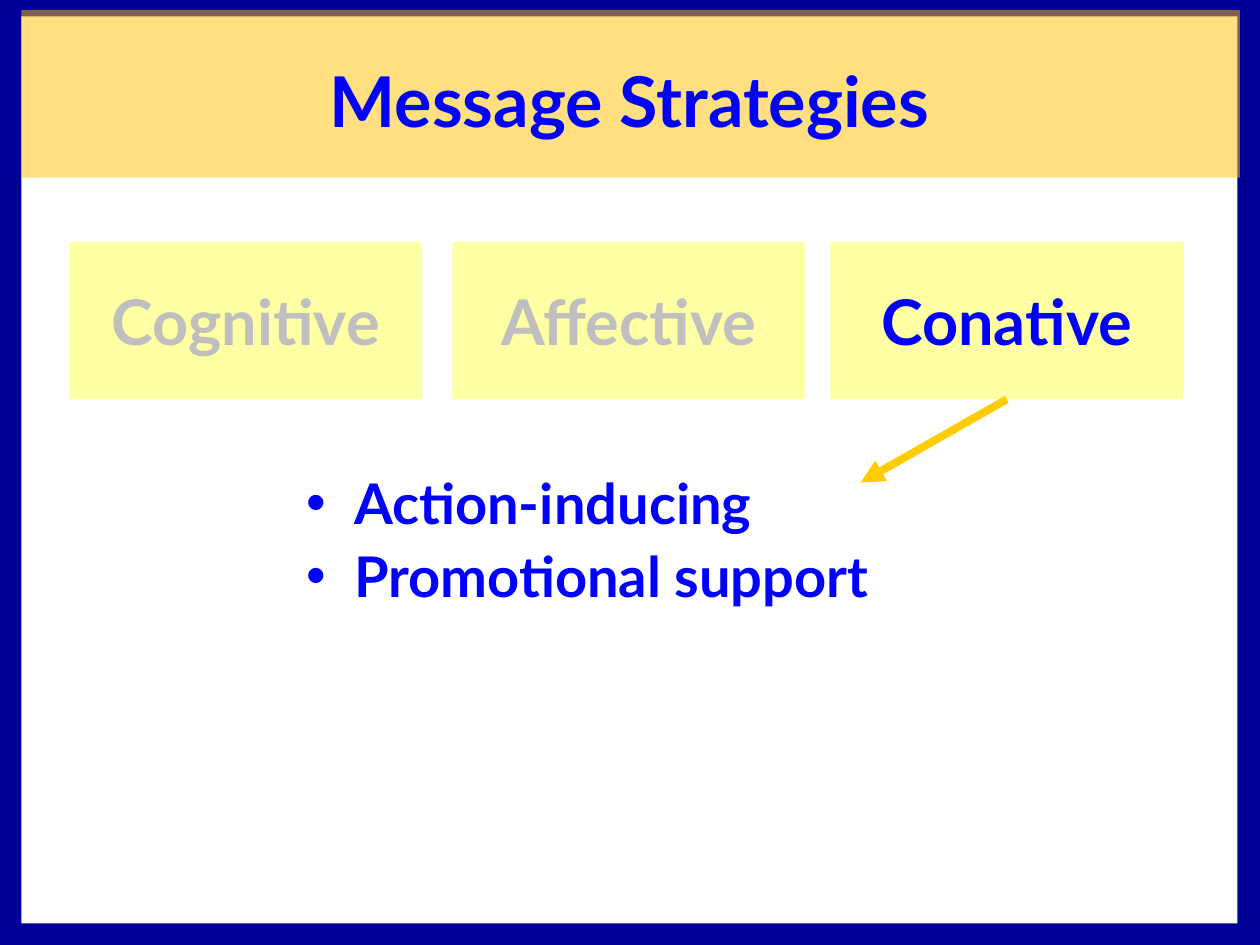
from dataclasses import dataclass

from lxml import etree
from pptx import Presentation
from pptx import util as u
from pptx.dml.color import RGBColor
from pptx.enum import shapes, text
from pptx.oxml.ns import qn


@dataclass(frozen=True)
class Theme:
    font: str = "Lato"
    navy: str = "000099"
    white: str = "FFFFFF"
    band: str = "FFC000"
    card: str = "FFFF00"
    arrow: str = "FFCC00"
    active: str = "0000FF"
    muted: str = "BFBFBF"
    title_pt: int = 40
    card_pt: int = 36
    body_pt: int = 32


@dataclass(frozen=True)
class Box:
    x: float
    y: float
    w: float
    h: float


@dataclass(frozen=True)
class Strategy:
    name: str
    left: float
    color: str


T = Theme()
FRAMES = [
    (Box(0, 0, 10, 7.5), T.navy),
    (Box(0.17, 0.13, 9.65, 7.2), T.white),
    (Box(0.33, 0.32, 9.33, 7), T.white),
]
STRATEGIES = [
    Strategy("Cognitive", 0.55, T.muted),
    Strategy("Affective", 3.59, T.muted),
    Strategy("Conative", 6.59, T.active),
]
TACTICS = ["Action-inducing", "Promotional support"]


def add_rect(s, box: Box, color: str, opacity: int = 100):
    """Draw a plain rectangle; opacity is in percent."""
    sp = s.shapes.add_shape(shapes.MSO_SHAPE.RECTANGLE, u.Inches(box.x),
                            u.Inches(box.y), u.Inches(box.w), u.Inches(box.h))
    sp.shadow.inherit = False
    sp.line.fill.background()
    sp.fill.solid()
    sp.fill.fore_color.rgb = RGBColor.from_string(color)
    if opacity < 100:
        clr = sp.element.spPr.find(qn("a:solidFill"))[0]
        etree.SubElement(clr, qn("a:alpha"), val=str(opacity * 1000))
    return sp


def write(p, content: str, *, size: int, color: str = T.active,
          align=text.PP_ALIGN.CENTER) -> None:
    """Write one formatted run into a paragraph."""
    p.alignment = align
    r = p.add_run()
    r.text = content
    r.font.name, r.font.size, r.font.bold = T.font, u.Pt(size), True
    r.font.color.rgb = RGBColor.from_string(color)


def place(sp, box: Box, anchor):
    """Move a placeholder to the front and into its box."""
    sp.left, sp.top = u.Inches(box.x), u.Inches(box.y)
    sp.width, sp.height = u.Inches(box.w), u.Inches(box.h)
    tf = sp.text_frame
    tf.word_wrap, tf.auto_size = True, text.MSO_AUTO_SIZE.NONE
    tf.vertical_anchor = anchor
    sp.element.getparent().append(sp.element)
    return tf


def add_card(s, item: Strategy):
    sp = add_rect(s, Box(item.left, 1.92, 2.8, 1.25), T.card, 36)
    tf = sp.text_frame
    tf.word_wrap = False
    tf.vertical_anchor = text.MSO_ANCHOR.MIDDLE
    write(tf.paragraphs[0], item.name, size=T.card_pt, color=item.color)
    return sp


def add_arrow(s, source, x: float, y: float) -> None:
    """Draw an arrow from the bottom middle of source to a point."""
    cx = s.shapes.add_connector(shapes.MSO_CONNECTOR.STRAIGHT,
                                source.left + source.width // 2,
                                source.top + source.height,
                                u.Inches(x), u.Inches(y))
    cx.begin_connect(source, 2)
    cx.line.color.rgb = RGBColor.from_string(T.arrow)
    cx.line.width = u.Pt(4.5)
    etree.SubElement(cx.line._get_or_add_ln(), qn("a:tailEnd"), type="triangle")
    etree.SubElement(cx.element.spPr, qn("a:effectLst"))


def add_bullet(p) -> None:
    pPr = p._p.get_or_add_pPr()
    indent = u.Inches(0.38)
    pPr.set("marL", str(indent))
    pPr.set("indent", str(-indent))
    clr = etree.SubElement(pPr, qn("a:buClr"))
    etree.SubElement(clr, qn("a:srgbClr"), val=T.active)
    etree.SubElement(pPr, qn("a:buChar"), char="•")


def main() -> None:
    prs = Presentation()
    prs.slide_width, prs.slide_height = u.Inches(10), u.Inches(7.5)
    s = prs.slides.add_slide(prs.slide_layouts[1])

    # Frame and title band
    for box, color in FRAMES:
        add_rect(s, box, color)
    add_rect(s, Box(0.17, 0.08, 9.67, 1.33), T.band, 50)

    # Strategy cards, with an arrow from the active one
    cards = [add_card(s, item) for item in STRATEGIES]
    add_arrow(s, cards[-1], 6.83, 3.83)

    # Title
    tf = place(s.shapes.title, Box(0.33, 0.25, 9.33, 1.08), text.MSO_ANCHOR.MIDDLE)
    write(tf.paragraphs[0], "Message Strategies", size=T.title_pt)

    # Tactics list
    tf = place(s.placeholders[1], Box(2.33, 3.67, 5.17, 1.83), text.MSO_ANCHOR.TOP)
    for i, tactic in enumerate(TACTICS):
        p = tf.add_paragraph() if i else tf.paragraphs[0]
        p.space_before = u.Pt(T.body_pt * 0.1)
        add_bullet(p)
        write(p, tactic, size=T.body_pt, align=text.PP_ALIGN.LEFT)

    prs.save("out.pptx")


if __name__ == "__main__":
    main()
